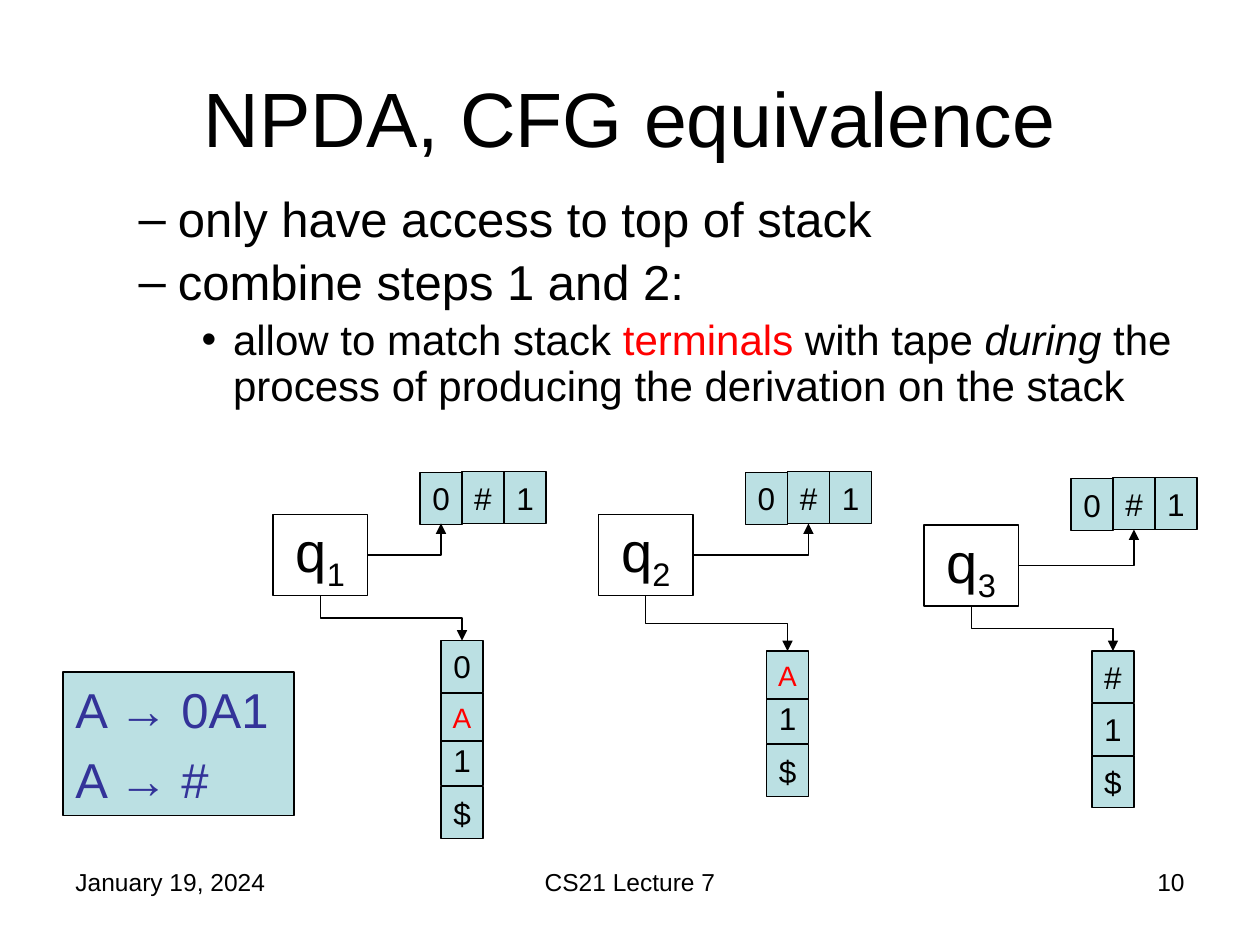
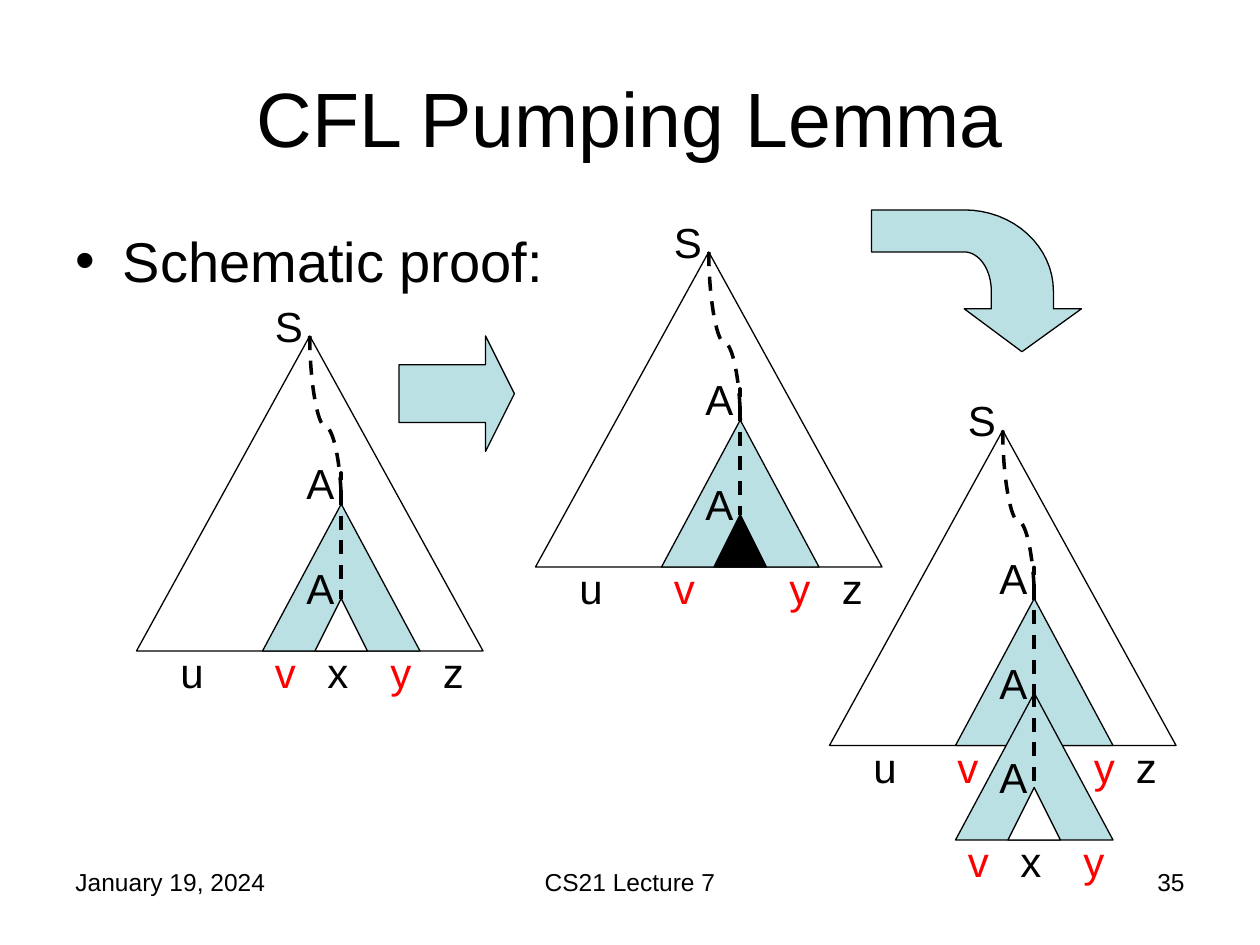
from dataclasses import dataclass
from math import cos, pi, sin
from typing import NamedTuple, Optional

from lxml.etree import SubElement
from pptx import Presentation
from pptx.dml.color import RGBColor
from pptx.enum.dml import MSO_LINE
from pptx.enum.shapes import MSO_CONNECTOR, MSO_SHAPE
from pptx.enum.text import MSO_ANCHOR, MSO_AUTO_SIZE, PP_ALIGN
from pptx.oxml.ns import qn
from pptx.shapes.autoshape import Shape
from pptx.shapes.connector import Connector
from pptx.slide import Slide
from pptx.text.text import TextFrame
from pptx.util import Pt

FONT = "Arial"
BLACK = RGBColor(0x00, 0x00, 0x00)
WHITE = RGBColor(0xFF, 0xFF, 0xFF)
RED = RGBColor(0xFF, 0x00, 0x00)
TEAL = RGBColor(0xBB, 0xE0, 0xE3)
INDIGO = RGBColor(0x33, 0x33, 0x99)

CELL_WIDTH, CELL_HEIGHT, CELL_PITCH = 24, 29.6, 30
VARIABLE_HEIGHT, VARIABLE_PITCH = 27.5, 23.5
STATE_WIDTH, STATE_HEIGHT = 54, 46.4
TREE_WIDTH, TREE_HEIGHT = 198, 180
SUBTREE_WIDTH, SUBTREE_HEIGHT = 90, 84
CORE_SIZE, CORE_TOP = 30, 54


class Box(NamedTuple):
    left: float
    top: float
    width: float
    height: float


class Label(NamedTuple):
    text: str
    offset: float


@dataclass(frozen=True)
class Machine:
    state: str
    left: float
    top: float
    tape_top: float
    head: int
    stack_top: float
    stack: str


@dataclass(frozen=True)
class Tree:
    left: float
    top: float
    core: Optional[RGBColor]
    labels: tuple[Label, ...]


MACHINES = (
    Machine("1", 156, 294, 269.5, 0, 366, "0A1$"),
    Machine("2", 342, 294, 269.5, 1, 372, "A1$"),
    Machine("3", 528, 300, 273, 1, 372, "#1$"),
)

TREES = (
    Tree(78, 192, WHITE,
         (Label("u", 18), Label("v", 72), Label("x", 102), Label("y", 138), Label("z", 168))),
    Tree(306, 144, BLACK,
         (Label("u", 18), Label("v", 72), Label("y", 138), Label("z", 168))),
    Tree(474, 246, None,
         (Label("u", 18), Label("v", 66), Label("y", 144), Label("z", 168))),
)


def in_points(box: Box) -> tuple[Pt, ...]:
    return tuple(Pt(length) for length in box)


def format_runs(text_frame: TextFrame, size: float, color: RGBColor = BLACK,
                alignment: Optional[PP_ALIGN] = None) -> None:
    for paragraph in text_frame.paragraphs:
        if alignment is not None:
            paragraph.alignment = alignment
        for run in paragraph.runs:
            run.font.name = FONT
            run.font.size = Pt(size)
            run.font.color.rgb = color


def add_text(slide: Slide, box: Box, text: str, size: float, color: RGBColor = BLACK,
             alignment: PP_ALIGN = PP_ALIGN.LEFT) -> None:
    text_frame = slide.shapes.add_textbox(*in_points(box)).text_frame
    text_frame.word_wrap = True
    text_frame.text = text
    format_runs(text_frame, size, color, alignment)


def style_shape(shape: Shape, fill: Optional[RGBColor]) -> None:
    shape.shadow.inherit = False
    if fill is None:
        shape.fill.background()
    else:
        shape.fill.solid()
        shape.fill.fore_color.rgb = fill
    shape.line.color.rgb = BLACK
    shape.line.width = Pt(0.75)


def add_preset(slide: Slide, kind: MSO_SHAPE, box: Box, fill: Optional[RGBColor]) -> Shape:
    shape = slide.shapes.add_shape(kind, *in_points(box))
    style_shape(shape, fill)
    return shape


def add_cell(slide: Slide, box: Box, text: str, size: float = 18, color: RGBColor = BLACK,
             fill: Optional[RGBColor] = TEAL) -> Shape:
    shape = add_preset(slide, MSO_SHAPE.RECTANGLE, box, fill)
    text_frame = shape.text_frame
    text_frame.word_wrap = False
    text_frame.vertical_anchor = MSO_ANCHOR.MIDDLE
    text_frame.text = text
    format_runs(text_frame, size, color, PP_ALIGN.CENTER)
    return shape


def add_line(slide: Slide, kind: MSO_CONNECTOR, start: tuple[float, float],
             end: tuple[float, float], width: float) -> Connector:
    connector = slide.shapes.add_connector(
        kind, Pt(start[0]), Pt(start[1]), Pt(end[0]), Pt(end[1]))
    connector.line.color.rgb = BLACK
    connector.line.width = Pt(width)
    SubElement(connector.element.spPr, qn("a:effectLst"))
    return connector


def add_downward_line(slide: Slide, kind: MSO_CONNECTOR, start: tuple[float, float],
                      end: tuple[float, float], width: float, bend: float) -> Connector:
    center_x, center_y = (start[0] + end[0]) / 2, (start[1] + end[1]) / 2
    half_run, half_drop = (end[0] - start[0]) / 2, (end[1] - start[1]) / 2
    connector = add_line(slide, kind, (center_x - half_drop, center_y + half_run),
                         (center_x + half_drop, center_y - half_run), width)
    properties = connector.element.spPr
    transform = properties.find(qn("a:xfrm"))
    transform.set("rot", "5400000")
    transform.set("flipV", "1")
    adjustments = properties.find(qn("a:prstGeom")).find(qn("a:avLst"))
    SubElement(adjustments, qn("a:gd"), name="adj1", fmla=f"val {round(bend * 100000)}")
    return connector


def add_arrowhead(connector: Connector) -> None:
    SubElement(connector.element.spPr.find(qn("a:ln")), qn("a:tailEnd"), type="triangle")


def start_slide(presentation: Presentation, title: str, number: str, body_box: Box) -> Slide:
    slide = presentation.slides.add_slide(presentation.slide_layouts[1])
    body = slide.placeholders[1]
    for shape, box in ((slide.shapes.title, Box(36, 21.6, 648, 90)), (body, body_box)):
        shape.left, shape.top, shape.width, shape.height = in_points(box)
        shape.text_frame.auto_size = MSO_AUTO_SIZE.NONE
    slide.shapes.title.text_frame.text = title
    format_runs(slide.shapes.title.text_frame, 44, alignment=PP_ALIGN.CENTER)
    for text, left, width, alignment in (
        ("January 19, 2024", 36, 168, PP_ALIGN.LEFT),
        ("CS21 Lecture 7", 246, 228, PP_ALIGN.CENTER),
        (number, 516, 168, PP_ALIGN.RIGHT),
    ):
        add_text(slide, Box(left, 492, width, 37.5), text, 14, alignment=alignment)
    return slide


def draw_machine(slide: Slide, machine: Machine) -> None:
    tape_left, stack_left = machine.left + 84, machine.left + 96
    for index, symbol in enumerate("0#1"):
        drop = 0.5 if index == 0 else 0
        add_cell(slide, Box(tape_left + index * CELL_WIDTH, machine.tape_top + drop,
                            CELL_WIDTH, CELL_HEIGHT), symbol)

    state = add_cell(slide, Box(machine.left, machine.top, STATE_WIDTH, STATE_HEIGHT),
                     "q", 32, fill=None)
    paragraph = state.text_frame.paragraphs[0]
    paragraph.add_run().text = machine.state
    format_runs(state.text_frame, 32)
    paragraph.runs[1].font._element.set("baseline", "-25000")

    head_line = add_line(
        slide, MSO_CONNECTOR.ELBOW,
        (machine.left + STATE_WIDTH, machine.top + STATE_HEIGHT / 2),
        (tape_left + (machine.head + 0.5) * CELL_WIDTH, machine.tape_top + CELL_HEIGHT), 0.75)
    head_line.element.spPr.find(qn("a:prstGeom")).set("prst", "bentConnector2")
    add_arrowhead(head_line)
    add_arrowhead(add_downward_line(
        slide, MSO_CONNECTOR.ELBOW,
        (machine.left + STATE_WIDTH / 2, machine.top + STATE_HEIGHT),
        (stack_left + CELL_WIDTH / 2, machine.stack_top), 0.75, 0.5))

    rows = []
    top = machine.stack_top
    for symbol in machine.stack:
        rows.append((symbol, top))
        top += VARIABLE_PITCH if symbol == "A" else CELL_PITCH
    for symbol, top in sorted(rows, key=lambda row: row[0] == "A"):
        if symbol == "A":
            add_cell(slide, Box(stack_left, top, CELL_WIDTH, VARIABLE_HEIGHT), symbol, 16, RED)
        else:
            add_cell(slide, Box(stack_left, top, CELL_WIDTH, CELL_HEIGHT), symbol)


def build_equivalence_slide(presentation: Presentation) -> None:
    slide = start_slide(presentation, "NPDA, CFG equivalence", "10", Box(36, 108, 648, 138))
    text_frame = slide.placeholders[1].text_frame
    text_frame.text = "only have access to top of stack\ncombine steps 1 and 2:"
    for paragraph in text_frame.paragraphs:
        paragraph.level = 1
    format_runs(text_frame, 28)
    detail = text_frame.add_paragraph()
    detail.level = 2
    for text in ("allow to match stack ", "terminals", " with tape ", "during",
                 " the process of producing the derivation on the stack"):
        run = detail.add_run()
        run.text = text
        run.font.name = FONT
        run.font.size = Pt(24)
        run.font.color.rgb = RED if text == "terminals" else BLACK
        run.font.italic = text == "during"
    for paragraph in text_frame.paragraphs:
        paragraph.line_spacing = 0.9

    for machine in MACHINES:
        draw_machine(slide, machine)

    rules = add_cell(slide, Box(36, 384, 132, 82), "A → 0A1\nA → #", 28, INDIGO)
    rules.text_frame.word_wrap = True
    for paragraph in rules.text_frame.paragraphs:
        paragraph.alignment = PP_ALIGN.LEFT
    rules.text_frame.paragraphs[1].space_before = Pt(6.5)


def add_node(slide: Slide, text: str, left: float, top: float) -> None:
    add_text(slide, Box(left, top, 30, 36), text, 24, RED if text in "vy" else BLACK)


def draw_labels(slide: Slide, labels: tuple[Label, ...], left: float, top: float) -> None:
    for label in labels:
        add_node(slide, label.text, left + label.offset, top)


def add_derivation(slide: Slide, start: tuple[float, float], end: tuple[float, float],
                   bend: float) -> None:
    connector = add_downward_line(slide, MSO_CONNECTOR.CURVE, start, end, 2, bend)
    connector.line.dash_style = MSO_LINE.DASH


def draw_subtree(slide: Slide, left: float, top: float, core: Optional[RGBColor],
                 bend: float) -> None:
    add_preset(slide, MSO_SHAPE.ISOSCELES_TRIANGLE,
               Box(left, top, SUBTREE_WIDTH, SUBTREE_HEIGHT), TEAL)
    if core is not None:
        add_preset(slide, MSO_SHAPE.ISOSCELES_TRIANGLE,
                   Box(left + 30, top + CORE_TOP, CORE_SIZE, CORE_SIZE), core)
    add_node(slide, "A", left + 18, top + 30)
    apex = left + SUBTREE_WIDTH / 2
    add_derivation(slide, (apex, top), (apex, top + CORE_TOP), bend)


def draw_tree(slide: Slide, tree: Tree) -> None:
    left, top = tree.left, tree.top
    add_preset(slide, MSO_SHAPE.ISOSCELES_TRIANGLE,
               Box(left, top, TREE_WIDTH, TREE_HEIGHT), None)
    draw_subtree(slide, left + 72, top + 96, tree.core, -0.33)
    draw_labels(slide, tree.labels, left, top + 174)
    add_node(slide, "S", left + 72, top - 24)
    add_node(slide, "A", left + 90, top + 66)
    add_derivation(slide, (left + TREE_WIDTH / 2, top), (left + 117, top + 96), 0.54)


def draw_turning_arrow(slide: Slide) -> None:
    angles = [step * pi / 32 for step in range(17)]
    outer = [(551 + 51 * cos(angle), 166.5 - 46.5 * sin(angle)) for angle in angles]
    inner = [(551 + 15.5 * sin(angle), 166.5 - 22.5 * cos(angle)) for angle in angles]
    outline = [(584, 201), (618, 176.5), (602, 176.5), *outer, (498, 120), (498, 144),
               *inner, (566.5, 176.5), (551, 176.5)]
    points = [(Pt(x), Pt(y)) for x, y in outline]
    builder = slide.shapes.build_freeform(*points[0])
    builder.add_line_segments(points[1:], close=True)
    style_shape(builder.convert_to_shape(), TEAL)


def build_pumping_slide(presentation: Presentation) -> None:
    slide = start_slide(presentation, "CFL Pumping Lemma", "35", Box(36, 126, 648, 54))
    text_frame = slide.placeholders[1].text_frame
    text_frame.text = "Schematic proof:"
    format_runs(text_frame, 32)
    for tree in TREES:
        draw_tree(slide, tree)
    arrow = add_preset(slide, MSO_SHAPE.RIGHT_ARROW, Box(228, 192, 66, 66), TEAL)
    arrow.adjustments[0], arrow.adjustments[1] = 0.5, 0.25
    draw_turning_arrow(slide)
    draw_subtree(slide, 546, 396, WHITE, 0.03)
    draw_labels(slide, (Label("v", 0), Label("x", 30), Label("y", 66)), 546, 474)


def main() -> None:
    presentation = Presentation()
    presentation.slide_width, presentation.slide_height = Pt(720), Pt(540)
    build_equivalence_slide(presentation)
    build_pumping_slide(presentation)
    presentation.save("out.pptx")


if __name__ == "__main__":
    main()
